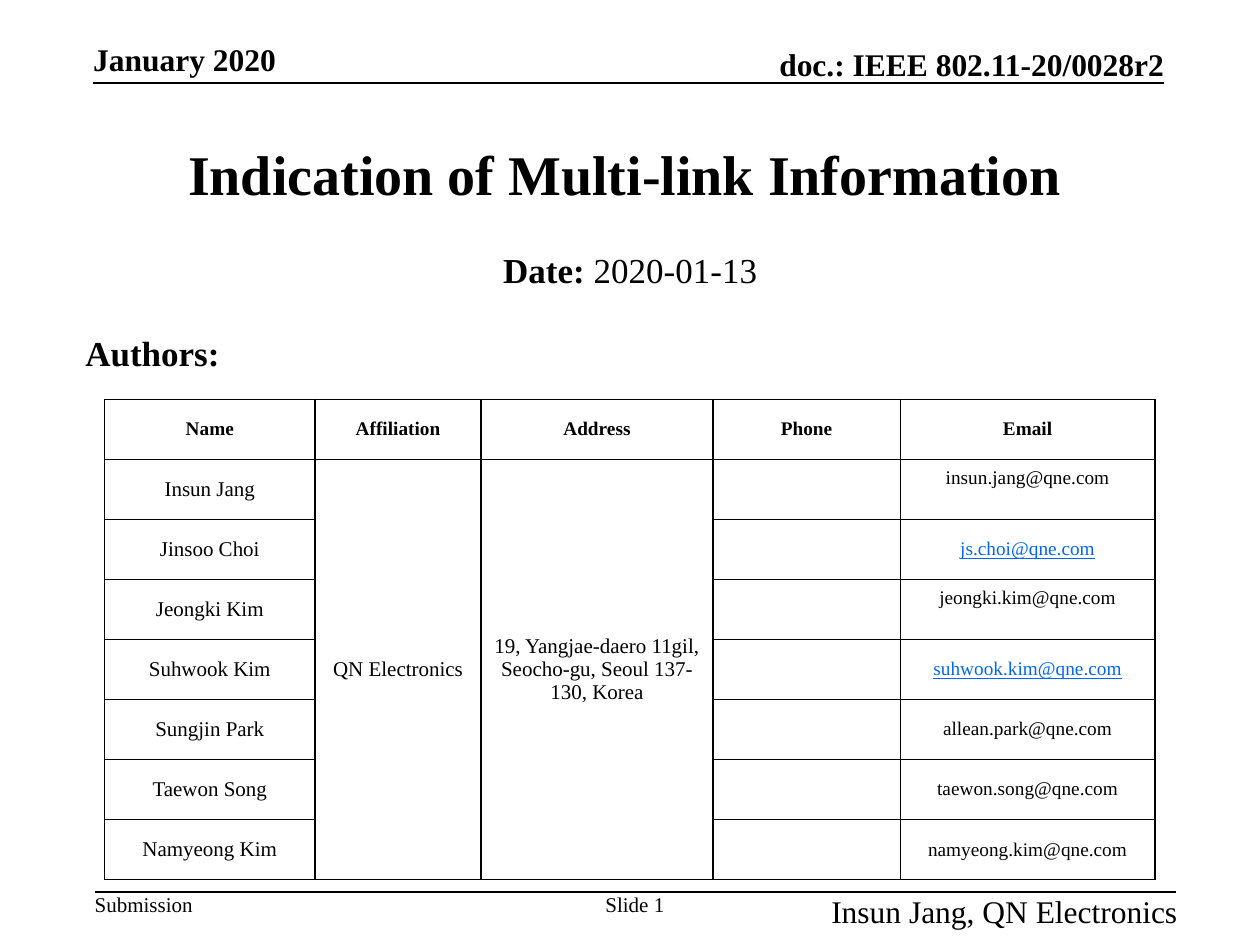
from lxml.etree import SubElement
from pptx import Presentation
from pptx.dml.color import RGBColor
from pptx.enum.shapes import MSO_CONNECTOR
from pptx.enum.text import MSO_ANCHOR, PP_ALIGN
from pptx.oxml.ns import qn
from pptx.util import Cm, Pt

BLACK = RGBColor(0x00, 0x00, 0x00)
WHITE = RGBColor(0xFF, 0xFF, 0xFF)
LINK_BLUE = RGBColor(0x00, 0x66, 0xFF)
FONT = "Times New Roman"
LEFT, CENTER, RIGHT = PP_ALIGN.LEFT, PP_ALIGN.CENTER, PP_ALIGN.RIGHT
TOP, MIDDLE, BOTTOM = MSO_ANCHOR.TOP, MSO_ANCHOR.MIDDLE, MSO_ANCHOR.BOTTOM


def format_run(run, size, bold=False, color=BLACK):
    run.font.name = FONT
    run.font.size = Pt(size)
    run.font.bold = bold
    run.font.color.rgb = color


def add_text(box, text, size, bold, alignment, anchor, margins=(0, 0)):
    shape = slide.shapes.add_textbox(*[Cm(length) for length in box])
    text_frame = shape.text_frame
    text_frame.word_wrap = True
    text_frame.vertical_anchor = anchor
    text_frame.margin_left = text_frame.margin_right = Cm(margins[0])
    text_frame.margin_top = text_frame.margin_bottom = Cm(margins[1])
    text_frame.text = text
    paragraph = text_frame.paragraphs[0]
    paragraph.alignment = alignment
    format_run(paragraph.runs[0], size, bold)
    return paragraph


presentation = Presentation()
presentation.slide_width = Cm(25.4)
presentation.slide_height = Cm(19.05)
slide = presentation.slides.add_slide(presentation.slide_layouts[6])

# Header and footer rules
for start, end, height in [(1.88, 23.47, 1.68), (1.91, 23.7, 17.98)]:
    rule = slide.shapes.add_connector(
        MSO_CONNECTOR.STRAIGHT, Cm(start), Cm(height), Cm(end), Cm(height))
    rule.line.color.rgb = BLACK
    rule.line.width = Pt(1)
    SubElement(rule.element.spPr, qn("a:effectLst"))

# Header and footer texts
add_text((1.88, 0.81, 6, 0.76), "January 2020", 18, True, LEFT, BOTTOM)
add_text((13.47, 0.91, 10, 0.76), "doc.: IEEE 802.11-20/0028r2", 18, True, RIGHT, BOTTOM)
add_text((1.91, 17.98, 4, 0.51), "Submission", 12, False, LEFT, TOP)
add_text((10.8, 17.98, 4, 0.51), "Slide 1", 12, False, CENTER, TOP)
add_text((15.74, 17.98, 8, 0.76), "Insun Jang, QN Electronics", 18, False, RIGHT, TOP)

# Title, date and authors heading
margins = (0.25, 0.13)
add_text((1.07, 1.91, 23.06, 3.18), "Indication of Multi-link Information",
         32, True, CENTER, MIDDLE, margins)
date = add_text((1.91, 4.88, 21.59, 1.07), "Date:", 20, True, CENTER, TOP, margins)
date_value = date.add_run()
date_value.text = " 2020-01-13"
format_run(date_value, 20)
authors_heading = add_text((1.47, 6.55, 4.01, 1.07), "Authors:", 20, True, LEFT, TOP, margins)
for paragraph in (date, authors_heading):
    paragraph.space_before = Pt(2)

# Author table
headings = ["Name", "Affiliation", "Address", "Phone", "Email"]
authors = [
    ("Insun Jang", "insun.jang@qne.com"),
    ("Jinsoo Choi", "js.choi@qne.com"),
    ("Jeongki Kim", "jeongki.kim@qne.com"),
    ("Suhwook Kim", "suhwook.kim@qne.com"),
    ("Sungjin Park", "allean.park@qne.com"),
    ("Taewon Song", "taewon.song@qne.com"),
    ("Namyeong Kim", "namyeong.kim@qne.com"),
]
rows = [headings] + [[name, "", "", "", email] for name, email in authors]
rows[1][1] = "QN Electronics"
rows[1][2] = "19, Yangjae-daero 11gil, Seocho-gu, Seoul 137-130, Korea"
linked_rows = (2, 4)
raised_rows = (1, 3)
column_widths = [4.24, 3.35, 4.67, 3.78, 5.13]
row_height = 1.21

table = slide.shapes.add_table(
    len(rows), len(headings), Cm(2.11), Cm(8.05),
    Cm(sum(column_widths)), Cm(row_height * len(rows))).table
table.first_row = False
table.horz_banding = False
for column, width in zip(table.columns, column_widths):
    column.width = Cm(width)
for row in table.rows:
    row.height = Cm(row_height)
for column_index in (1, 2):
    table.cell(1, column_index).merge(table.cell(len(authors), column_index))

for row_index, values in enumerate(rows):
    is_heading = row_index == 0
    for column_index, value in enumerate(values):
        cell = table.cell(row_index, column_index)
        is_email = column_index == 4
        cell.vertical_anchor = MIDDLE
        if not is_heading:
            cell.margin_left = cell.margin_right = Cm(0.18)
            cell.margin_top = cell.margin_bottom = 0
            if is_email and row_index in raised_rows:
                cell.margin_bottom = Cm(0.45)

        # Borders come before the fill in the cell properties
        properties = cell._tc.get_or_add_tcPr()
        for side in ("a:lnL", "a:lnR", "a:lnT", "a:lnB"):
            border = SubElement(properties, qn(side), w=str(Pt(1)))
            border_fill = SubElement(border, qn("a:solidFill"))
            SubElement(border_fill, qn("a:srgbClr"), val=str(BLACK))
        cell.fill.solid()
        cell.fill.fore_color.rgb = WHITE

        if value:
            cell.text_frame.text = value
            paragraph = cell.text_frame.paragraphs[0]
            paragraph.alignment = CENTER
            run = paragraph.runs[0]
            is_link = is_email and row_index in linked_rows
            format_run(run, 11 if is_heading or is_email else 12, is_heading,
                       LINK_BLUE if is_link else BLACK)
            run.font.underline = is_link

presentation.save("out.pptx")
